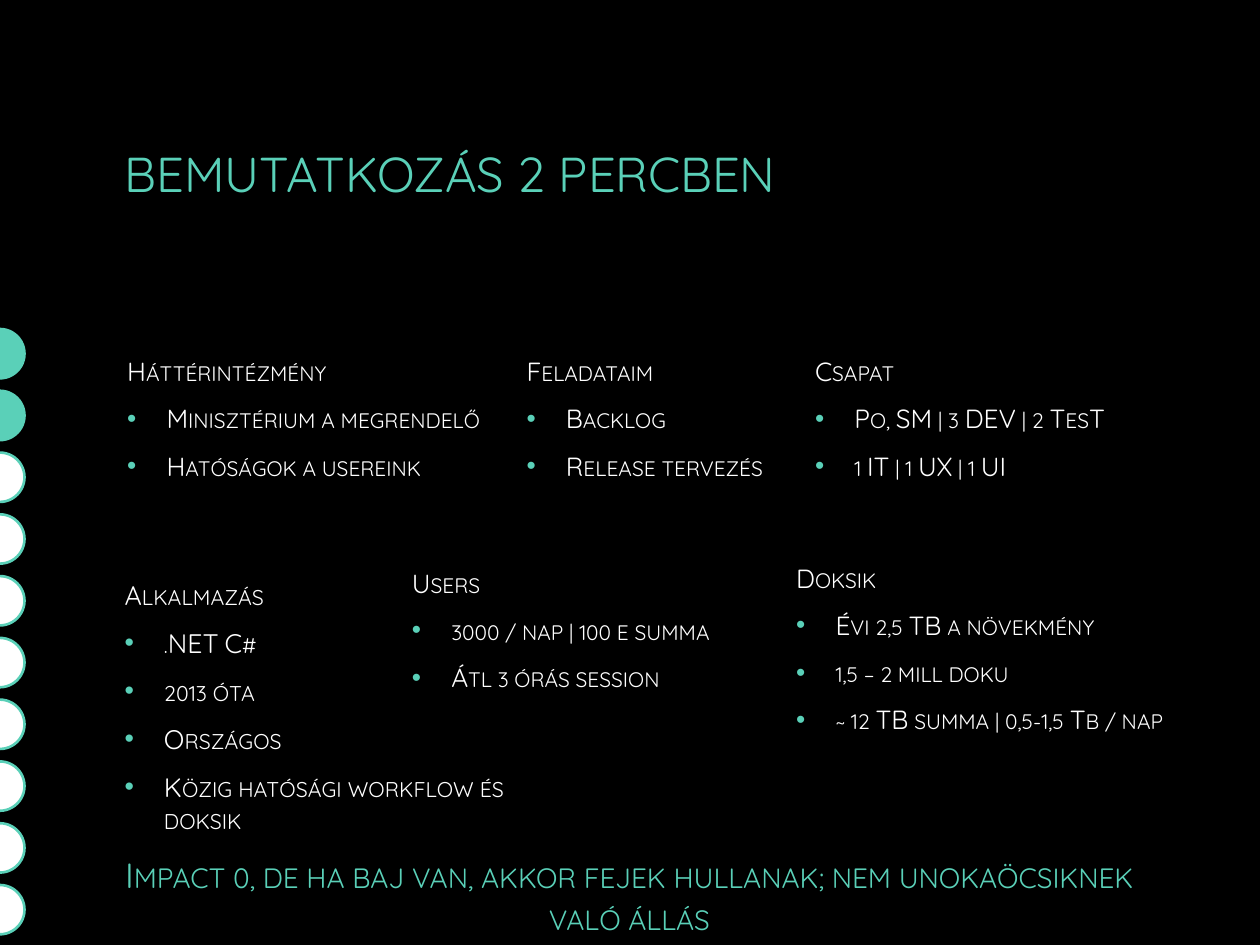
import pptx
import pptx.dml.color
import pptx.enum.shapes
import pptx.enum.text
import pptx.oxml
import pptx.oxml.ns
import pptx.util

COLORS = {"background": "000000", "accent": "5AD0B8", "text": "FFFFFF"}
FONT = "Quicksand"
BULLET_INDENT = 22.5
CARD_SIZE = (266.4, 103.7)
INSETS = {"margin_left": 5, "margin_right": 5, "margin_top": 2.9, "margin_bottom": 2.9}
WIDE_INSETS = {"margin_left": 7.2, "margin_right": 7.2, "margin_top": 3.6, "margin_bottom": 3.6}

DOT_COUNT, DOTS_DONE = 10, 2
DOT_LEFT, DOT_TOP, DOT_PITCH, DOT_SIZE = -14.2, 188, 35.3, 28.2

CARDS = [
    {"at": (67.7, 200.2), "heading": "Háttérintézmény",
     "items": ["Minisztérium a megrendelő", "Hatóságok a usereink"]},
    {"at": (295.9, 200.2), "heading": "Feladataim",
     "items": ["Backlog", "Release tervezés"]},
    {"at": (460.8, 200.2), "heading": "Csapat",
     "items": ["Po, SM | 3 DEV | 2 TesT", "1 IT | 1 UX | 1 UI"]},
    {"at": (64.1, 326.9), "heading": "Alkalmazás",
     "items": [".NET C#", "2013 óta", "Országos", "Közig hatósági workflow és doksik"],
     "extent": (265, 135.4), "size": 15.3, "insets": WIDE_INSETS},
    {"at": (230.4, 321.1), "heading": "Users",
     "items": ["3000 / nap | 100 e summa", "Átl 3 órás session"]},
    {"at": (450, 318.2), "heading": "Doksik",
     "items": ["Évi 2,5 TB a növekmény", "1,5 – 2 mill doku",
               "~ 12 TB summa | 0,5-1,5 Tb / nap"]},
]


def color(name):
    return pptx.dml.color.RGBColor.from_string(COLORS[name])


def points(values):
    return [pptx.util.Pt(value) for value in values]


def xml(markup):
    """Build one element, given with its a: prefix but no namespace."""
    tag, rest = markup.split(" ", 1)
    return pptx.oxml.parse_xml(f"{tag} {pptx.oxml.ns.nsdecls('a')} {rest}")


class SlideBuilder:
    def __init__(self, slide):
        self.slide = slide
        fill = slide.background.fill
        fill.solid()
        fill.fore_color.rgb = color("background")

    def text_box(self, at, extent, insets=INSETS, anchor="TOP"):
        box = self.slide.shapes.add_textbox(*points(at + extent))
        frame = box.text_frame
        frame.word_wrap = True
        frame.vertical_anchor = pptx.enum.text.MSO_ANCHOR[anchor]
        for name, value in insets.items():
            setattr(frame, name, pptx.util.Pt(value))
        return frame

    def add_span(self, para, text, size, color_name="text", small_caps=True):
        span = para.add_run()
        span.text = text
        style = {"name": FONT, "size": pptx.util.Pt(size)}
        for name, value in style.items():
            setattr(span.font, name, value)
        span.font.color.rgb = color(color_name)
        if small_caps:
            span._r.get_or_add_rPr().set("cap", "small")

    def space(self, para):
        para.space_after = pptx.util.Pt(6)
        before = xml('<a:spcBef ><a:spcPct val="20000"/></a:spcBef>')
        para._p.get_or_add_pPr().insert(0, before)

    def bullet(self, para):
        properties = para._p.get_or_add_pPr()
        indent = pptx.util.Pt(BULLET_INDENT)
        properties.set("marL", str(indent))
        properties.set("indent", str(-indent))
        for markup in (
            f'<a:buClr ><a:srgbClr val="{COLORS["accent"]}"/></a:buClr>',
            '<a:buFont typeface="Arial"/>',
            '<a:buChar char="•"/>',
        ):
            properties.append(xml(markup))

    def title(self, text, at, extent):
        frame = self.text_box(at, extent, WIDE_INSETS, "MIDDLE")
        self.add_span(frame.paragraphs[0], text, 28, "accent", small_caps=False)

    def card(self, at, heading, items, extent=CARD_SIZE, size=15, insets=INSETS):
        frame = self.text_box(at, extent, insets)
        para = frame.paragraphs[0]
        self.space(para)
        self.add_span(para, heading, size)
        for item in items:
            para = frame.add_paragraph()
            self.space(para)
            self.bullet(para)
            self.add_span(para, item, size)

    def closing_line(self, text, at, extent):
        para = self.text_box(at, extent).paragraphs[0]
        para.alignment = pptx.enum.text.PP_ALIGN.CENTER
        self.space(para)
        self.add_span(para, text, 20, "accent")

    def dot(self, top, fill_name):
        oval = pptx.enum.shapes.MSO_SHAPE.OVAL
        shape = self.slide.shapes.add_shape(
            oval, *points((DOT_LEFT, top, DOT_SIZE, DOT_SIZE)))
        shape.shadow.inherit = False
        shape.fill.solid()
        shape.fill.fore_color.rgb = color(fill_name)
        shape.line.color.rgb = color("accent")
        shape.line.width = pptx.util.Pt(1.5)


def main():
    deck = pptx.Presentation()
    deck.slide_width, deck.slide_height = points((720, 540))
    page = SlideBuilder(deck.slides.add_slide(deck.slide_layouts[6]))

    page.title("BEMUTATKOZÁS 2 PERCBEN", (64.1, 46.8), (591.1, 103.7))
    for index in range(DOT_COUNT):
        page.dot(DOT_TOP + index * DOT_PITCH, "accent" if index < DOTS_DONE else "text")
    for card in CARDS:
        page.card(**card)
    page.closing_line(
        "Impact 0, de ha baj van, akkor fejek hullanak; nem unokaöcsiknek való állás",
        (64.1, 484.6), (591.1, 75.6))

    deck.save("out.pptx")


if __name__ == "__main__":
    main()
